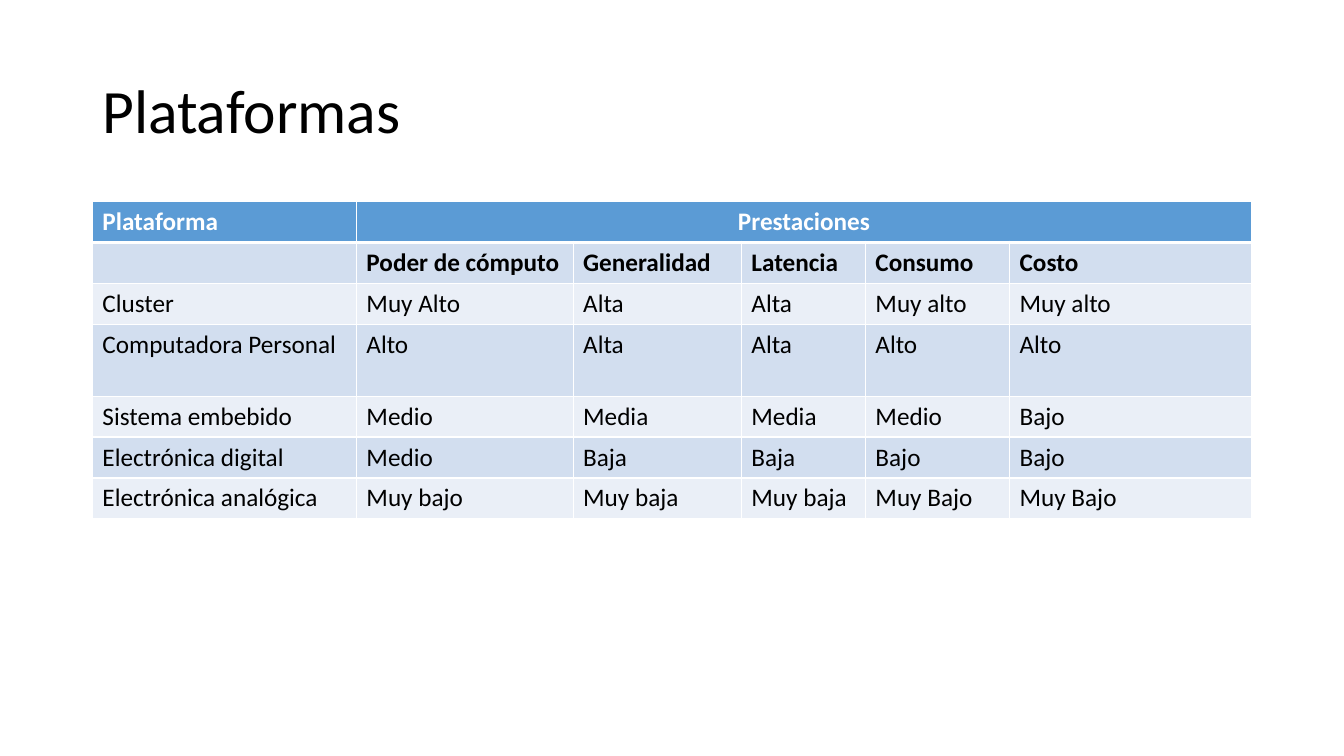
import pptx
import pptx.util
import pptx.dml.color
import pptx.enum.text
import pptx.oxml
import pptx.oxml.ns

Pt = pptx.util.Pt
RGBColor = pptx.dml.color.RGBColor

BLACK = RGBColor(0x00, 0x00, 0x00)
WHITE = RGBColor(0xFF, 0xFF, 0xFF)
HEADER_BLUE = RGBColor(0x5B, 0x9B, 0xD5)
BAND_DARK = RGBColor(0xD2, 0xDE, 0xEF)
BAND_LIGHT = RGBColor(0xEA, 0xEF, 0xF7)
FONT = "Calibri"

LEFT, WIDTH = 66, 828
COLUMN_WIDTHS = [188.6, 154.8, 120.2, 88.6, 103, 172.8]
ROW_HEIGHT, TALL_ROW_HEIGHT = 29.2, 51.4
TALL_ROW = 3

PLATFORMS = [
    ["Plataforma", "Prestaciones", "", "", "", ""],
    ["", "Poder de cómputo", "Generalidad", "Latencia", "Consumo", "Costo"],
    ["Cluster", "Muy Alto", "Alta", "Alta", "Muy alto", "Muy alto"],
    ["Computadora Personal", "Alto", "Alta", "Alta", "Alto", "Alto"],
    ["Sistema embebido", "Medio", "Media", "Media", "Medio", "Bajo"],
    ["Electrónica digital", "Medio", "Baja", "Baja", "Bajo", "Bajo"],
    ["Electrónica analógica", "Muy bajo", "Muy baja", "Muy baja", "Muy Bajo", "Muy Bajo"],
]


def format_text(paragraph, size, color, bold=False):
    for run in paragraph.runs:
        run.font.name = FONT
        run.font.size = Pt(size)
        run.font.bold = bold
        run.font.color.rgb = color


def add_title(slide, text):
    title = slide.shapes.add_textbox(Pt(LEFT), Pt(28.8), Pt(WIDTH), Pt(104.4))
    frame = title.text_frame
    frame.word_wrap = True
    frame.vertical_anchor = pptx.enum.text.MSO_ANCHOR.MIDDLE
    frame.text = text
    frame.paragraphs[0].line_spacing = 0.9
    format_text(frame.paragraphs[0], 44, BLACK)


def set_borders(cell, top, bottom):
    properties = cell._tc.get_or_add_tcPr()
    for side, width in (("L", 1), ("R", 1), ("T", top), ("B", bottom)):
        properties.append(pptx.oxml.parse_xml(
            f'<a:ln{side} {pptx.oxml.ns.nsdecls("a")} w="{Pt(width)}">'
            f'<a:solidFill><a:srgbClr val="{WHITE}"/></a:solidFill></a:ln{side}>'))


def style_cell(cell, text, row):
    # The header is separated from the body by a thicker rule
    set_borders(cell, 3 if row == 1 else 1, 3 if row == 0 else 1)
    cell.fill.solid()
    if row == 0:
        cell.fill.fore_color.rgb = HEADER_BLUE
    else:
        cell.fill.fore_color.rgb = BAND_DARK if row % 2 else BAND_LIGHT
    cell.text_frame.text = text
    format_text(cell.text_frame.paragraphs[0], 18, BLACK if row else WHITE, bold=row < 2)


def add_platform_table(slide, rows):
    heights = [TALL_ROW_HEIGHT if row == TALL_ROW else ROW_HEIGHT
               for row in range(len(rows))]
    table = slide.shapes.add_table(
        len(rows), len(COLUMN_WIDTHS), Pt(LEFT), Pt(144), Pt(WIDTH), Pt(sum(heights))).table
    for column, width in zip(table.columns, COLUMN_WIDTHS):
        column.width = Pt(width)
    for row, (texts, height) in enumerate(zip(rows, heights)):
        table.rows[row].height = Pt(height)
        for column, text in enumerate(texts):
            style_cell(table.cell(row, column), text, row)

    # "Prestaciones" spans all the performance columns
    performance = table.cell(0, 1)
    performance.merge(table.cell(0, len(COLUMN_WIDTHS) - 1))
    performance.text_frame.paragraphs[0].alignment = pptx.enum.text.PP_ALIGN.CENTER


def main():
    presentation = pptx.Presentation()
    presentation.slide_width, presentation.slide_height = Pt(960), Pt(540)
    slide = presentation.slides.add_slide(presentation.slide_layouts[6])
    add_title(slide, "Plataformas")
    add_platform_table(slide, PLATFORMS)
    presentation.save("out.pptx")


if __name__ == "__main__":
    main()
